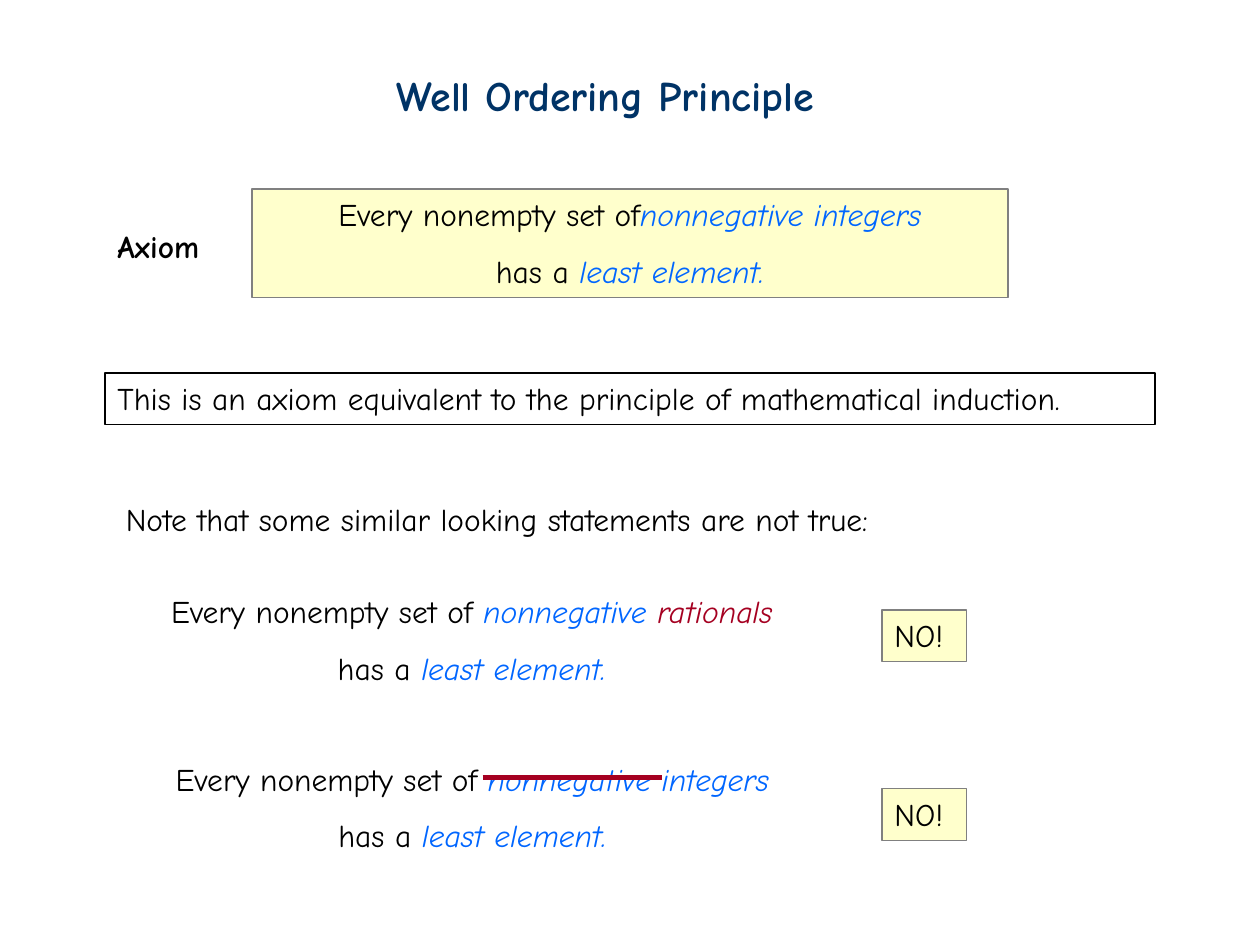
from lxml import etree
from pptx import Presentation
from pptx.dml.color import RGBColor
from pptx.enum.shapes import MSO_CONNECTOR, MSO_SHAPE
from pptx.enum.text import MSO_ANCHOR, PP_ALIGN
from pptx.oxml.ns import qn
from pptx.util import Inches, Pt

RECTANGLE = MSO_SHAPE.RECTANGLE
STRAIGHT = MSO_CONNECTOR.STRAIGHT
TOP = MSO_ANCHOR.TOP
LEFT, CENTER = PP_ALIGN.LEFT, PP_ALIGN.CENTER

BLACK = RGBColor(0x00, 0x00, 0x00)
NAVY = RGBColor(0x00, 0x33, 0x66)
BLUE = RGBColor(0x00, 0x66, 0xFF)
CRIMSON = RGBColor(0xA5, 0x00, 0x21)
CREAM = RGBColor(0xFF, 0xFF, 0xCC)
GRAY = RGBColor(0x80, 0x80, 0x80)

FONT = "Comic Neue"
WIDTH, HEIGHT = 10, 7.5
MARGIN = WIDTH / 12
ANSWER_LEFT = 0.7 * WIDTH
LINE_HEIGHT = 0.41
LEAST_ELEMENT = [("has a ", BLACK), ("least element.", BLUE)]


def add_span(para, text, color=BLACK, size=18, bold=False):
    span = para.add_run()
    span.text = text
    font = span.font
    font.name = FONT
    font.size = Pt(size)
    font.bold = bold
    font.italic = color in (BLUE, CRIMSON)
    font.color.rgb = color


def prepare_frame(box, align=LEFT):
    frame = box.text_frame
    frame.word_wrap = True
    frame.vertical_anchor = TOP
    para = frame.paragraphs[0]
    para.alignment = align
    return para


def add_title(page, text, left, top, width, height):
    title = page.shapes.title
    title.left, title.top = Inches(left), Inches(top)
    title.width, title.height = Inches(width), Inches(height)
    add_span(prepare_frame(title), text, NAVY, 24, True)


def add_label(page, text, left, top, width, bold=False):
    box = page.shapes.add_textbox(
        Inches(left), Inches(top), Inches(width), Inches(LINE_HEIGHT))
    add_span(prepare_frame(box), text, bold=bold)


def add_frame(page, left, top, width, height, fill=CREAM, line=GRAY):
    box = page.shapes.add_shape(
        RECTANGLE, Inches(left), Inches(top), Inches(width), Inches(height))
    box.shadow.inherit = False
    if fill is None:
        box.fill.background()
    else:
        box.fill.solid()
        box.fill.fore_color.rgb = fill
    box.line.color.rgb = line
    box.line.width = Pt(0.75)
    return box


def write_statement(box, subject):
    para = prepare_frame(box, CENTER)
    for text, color in subject:
        add_span(para, text, color)
    para = box.text_frame.add_paragraph()
    para.alignment = CENTER
    para.line_spacing = 1.5
    for text, color in LEAST_ELEMENT:
        add_span(para, text, color)


def add_false_statement(page, subject, left, top, width, answer_top):
    box = page.shapes.add_textbox(
        Inches(left), Inches(top), Inches(width), Inches(0.85))
    write_statement(box, subject)
    answer = add_frame(page, ANSWER_LEFT, answer_top, 0.67, LINE_HEIGHT)
    add_span(prepare_frame(answer), "NO!")


def add_strike(page, left, right, y):
    strike = page.shapes.add_connector(
        STRAIGHT, Inches(left), Inches(y), Inches(right), Inches(y))
    strike.line.color.rgb = CRIMSON
    strike.line.width = Pt(3)
    etree.SubElement(strike._element.spPr, qn("a:effectLst"))


def main():
    deck = Presentation()
    deck.slide_width, deck.slide_height = Inches(WIDTH), Inches(HEIGHT)
    page = deck.slides.add_slide(deck.slide_layouts[5])

    add_title(page, "Well Ordering Principle", 3.05, 0.5, 3.95, 0.5)

    add_label(page, "Axiom", MARGIN, 1.75, 0.93, bold=True)
    axiom = add_frame(page, 0.2 * WIDTH, 0.2 * HEIGHT, 0.6 * WIDTH, 0.86)
    write_statement(axiom, [("Every nonempty set of", BLACK),
                            ("nonnegative integers", BLUE)])

    remark = add_frame(page, MARGIN, 2.96, WIDTH - 2 * MARGIN, LINE_HEIGHT,
                       None, BLACK)
    add_span(prepare_frame(remark), "This is an axiom equivalent to the "
             "principle of mathematical induction.")

    add_label(page, "Note that some similar looking statements are not true:",
              0.9, 3.92, 6.72)
    add_false_statement(page, [("Every nonempty set of ", BLACK),
                               ("nonnegative ", BLUE),
                               ("rationals", CRIMSON)],
                        0.91, 4.65, 5.67, 4.84)
    add_false_statement(page, [("Every nonempty set of ", BLACK),
                               ("nonnegative integers", BLUE)],
                        0.75, 5.98, 6, 6.26)
    add_strike(page, 3.83, 5.25, 6.17)

    deck.save("out.pptx")


if __name__ == "__main__":
    main()
